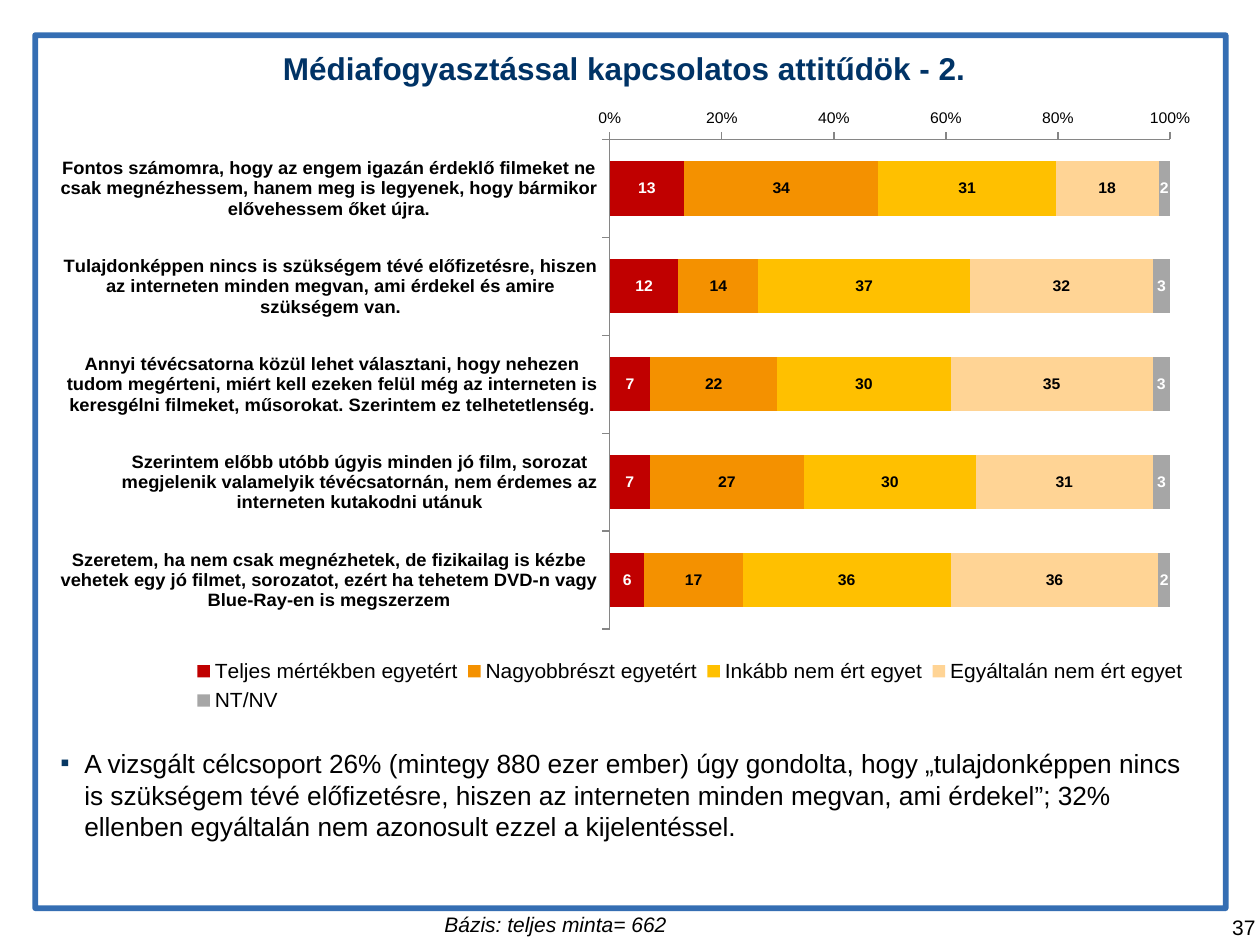
from dataclasses import dataclass

from lxml import etree
from pptx import Presentation
from pptx import util as u
from pptx.chart.data import CategoryChartData
from pptx.dml.color import RGBColor
from pptx.enum import chart as ch, shapes, text
from pptx.oxml import parse_xml
from pptx.oxml.ns import nsdecls, qn

FONT = "Arial"
COLORS = {
    "black": "000000", "white": "FFFFFF", "title": "003366", "bullet": "073763",
    "frame": "094FA3", "axis": "868686", "agree": "C00000", "mostly": "F49100",
    "rather_not": "FFC000", "not_at_all": "FFD495", "no_answer": "A6A6A6",
}


@dataclass
class Box:
    left: float
    top: float
    width: float
    height: float

    def emu(self) -> tuple:
        return tuple(u.Cm(v) for v in (self.left, self.top, self.width, self.height))


@dataclass
class Label:
    words: str
    box: Box
    size: float
    color: str = "black"
    align: text.PP_ALIGN = text.PP_ALIGN.LEFT
    anchor: text.MSO_ANCHOR = text.MSO_ANCHOR.TOP
    bold: bool = False
    italic: bool = False
    wrap: bool = True
    bullet: bool = False


@dataclass
class Answer:
    name: str
    values: tuple
    color: str
    label_color: str = "black"


STATEMENTS = [
    "Fontos számomra, hogy az engem igazán érdeklő filmeket ne csak megnézhessem, "
    "hanem meg is legyenek, hogy bármikor elővehessem őket újra.",
    "Tulajdonképpen nincs is szükségem tévé előfizetésre, hiszen az interneten "
    "minden megvan, ami érdekel és amire szükségem van.",
    "Annyi tévécsatorna közül lehet választani, hogy nehezen tudom megérteni, miért "
    "kell ezeken felül még az interneten is keresgélni filmeket, műsorokat. "
    "Szerintem ez telhetetlenség.",
    "Szerintem előbb utóbb úgyis minden jó film, sorozat megjelenik valamelyik "
    "tévécsatornán, nem érdemes az interneten kutakodni utánuk",
    "Szeretem, ha nem csak megnézhetek, de fizikailag is kézbe vehetek egy jó filmet, "
    "sorozatot, ezért ha tehetem DVD-n vagy Blue-Ray-en is megszerzem",
]
ANSWERS = [
    Answer("Teljes mértékben egyetért", (13, 12, 7, 7, 6), "agree", "white"),
    Answer("Nagyobbrészt egyetért", (34, 14, 22, 27, 17), "mostly"),
    Answer("Inkább nem ért egyet", (31, 37, 30, 30, 36), "rather_not"),
    Answer("Egyáltalán nem ért egyet", (18, 32, 35, 31, 36), "not_at_all"),
    Answer("NT/NV", (2, 3, 3, 3, 2), "no_answer", "white"),
]
LABELS = [
    Label("37", Box(23.88, 18.31, 1.68, 0.69), 12, align=text.PP_ALIGN.RIGHT),
    Label("Bázis: teljes minta= 662", Box(8.71, 18.26, 5.03, 0.76), 12,
          italic=True, wrap=False),
    Label("A vizsgált célcsoport 26% (mintegy 880 ezer ember) úgy gondolta, hogy "
          "„tulajdonképpen nincs is szükségem tévé előfizetésre, hiszen az interneten "
          "minden megvan, ami érdekel”; 32% ellenben egyáltalán nem azonosult ezzel a "
          "kijelentéssel.", Box(0.97, 14.94, 23.55, 2.18), 15, bullet=True),
    Label("Médiafogyasztással kapcsolatos attitűdök - 2.", Box(3.58, 0.61, 18.01, 1.5),
          18, "title", text.PP_ALIGN.CENTER, text.MSO_ANCHOR.MIDDLE, bold=True),
]


def rgb(name: str) -> RGBColor:
    return RGBColor.from_string(COLORS[name])


def style_font(font, size: float, color: str = "black", bold=False, italic=False) -> None:
    font.name, font.size = FONT, u.Pt(size)
    font.bold, font.italic = bold, italic
    font.color.rgb = rgb(color)


def add_bullet(p) -> None:
    """Give the paragraph a hanging indent and a small square bullet."""
    pPr = p._p.get_or_add_pPr()
    pPr.set("marL", str(u.Cm(0.48)))
    pPr.set("indent", str(u.Cm(-0.48)))
    color = etree.SubElement(pPr, qn("a:buClr"))
    etree.SubElement(color, qn("a:srgbClr"), val=COLORS["bullet"])
    etree.SubElement(pPr, qn("a:buFont"), typeface=FONT)
    etree.SubElement(pPr, qn("a:buChar"), char="▪")


def add_frame(s, box: Box) -> None:
    sp = s.shapes.add_shape(shapes.MSO_SHAPE.RECTANGLE, *box.emu())
    sp.shadow.inherit = False
    sp.fill.background()
    sp.line.color.rgb = rgb("frame")
    sp.line.width = u.Pt(3.25)
    color = sp.line._ln.find(".//" + qn("a:srgbClr"))
    etree.SubElement(color, qn("a:alpha"), val="81000")


def add_label(s, label: Label) -> None:
    tf = s.shapes.add_textbox(*label.box.emu()).text_frame
    tf.word_wrap = label.wrap
    tf.vertical_anchor = label.anchor
    tf.text = label.words
    p = tf.paragraphs[0]
    p.alignment = label.align
    if label.bullet:
        add_bullet(p)
    style_font(p.runs[0].font, label.size, label.color, label.bold, label.italic)


def manual_layout(x: float, y: float, w: float, h: float, inner: bool = False):
    """Return a c:layout element, in fractions of the chart area."""
    target = '<c:layoutTarget val="inner"/>' if inner else ""
    return parse_xml(
        f'<c:layout {nsdecls("c")}><c:manualLayout>{target}'
        '<c:xMode val="edge"/><c:yMode val="edge"/>'
        f'<c:x val="{x}"/><c:y val="{y}"/><c:w val="{w}"/><c:h val="{h}"/>'
        '</c:manualLayout></c:layout>')


def style_axis(axis, size: float, bold: bool = False) -> None:
    style_font(axis.tick_labels.font, size, bold=bold)
    axis.has_major_gridlines = False
    axis.major_tick_mark = ch.XL_TICK_MARK.OUTSIDE
    axis.minor_tick_mark = ch.XL_TICK_MARK.NONE
    axis.format.line.color.rgb = rgb("axis")


def add_attitude_chart(s, box: Box) -> None:
    data = CategoryChartData()
    data.categories = STATEMENTS
    for answer in ANSWERS:
        data.add_series(answer.name, answer.values)
    chart = s.shapes.add_chart(ch.XL_CHART_TYPE.BAR_STACKED_100, *box.emu(), data).chart
    style_font(chart.font, 9)
    chart.has_title = False

    plot = chart.plots[0]
    plot.gap_width, plot.overlap = 80, 100
    plot.vary_by_categories = False
    for series, answer in zip(plot.series, ANSWERS):
        series.format.fill.solid()
        series.format.fill.fore_color.rgb = rgb(answer.color)
        labels = series.data_labels
        labels.show_value = True
        labels.position = ch.XL_LABEL_POSITION.CENTER
        style_font(labels.font, 9, answer.label_color, bold=True)

    cats, vals = chart.category_axis, chart.value_axis
    style_axis(cats, 10.5, bold=True)
    cats.reverse_order = True
    cats.crosses = ch.XL_AXIS_CROSSES.MAXIMUM
    style_axis(vals, 9)
    vals.minimum_scale, vals.maximum_scale, vals.major_unit = 0, 1, 0.2
    vals.tick_labels.number_format = "0%"
    vals.tick_labels.number_format_is_linked = False

    chart.has_legend = True
    legend = chart.legend
    legend.position = ch.XL_LEGEND_POSITION.BOTTOM
    legend.include_in_layout = False
    style_font(legend.font, 12)
    legend._element.find(qn("c:legendPos")).addnext(manual_layout(0.11, 0.88, 0.88, 0.11))

    area = chart._chartSpace.chart.plotArea
    for old in area.findall(qn("c:layout")):
        area.remove(old)
    area.insert(0, manual_layout(0.48, 0.02, 0.49, 0.82, inner=True))


def main() -> None:
    prs = Presentation()
    prs.slide_width, prs.slide_height = u.Cm(25.4), u.Cm(19.05)
    s = prs.slides.add_slide(prs.slide_layouts[6])
    add_frame(s, Box(0.71, 0.71, 24, 17.6))
    add_attitude_chart(s, Box(1.22, 2.21, 23.06, 12.4))
    for label in LABELS:
        add_label(s, label)
    prs.save("out.pptx")


if __name__ == "__main__":
    main()
